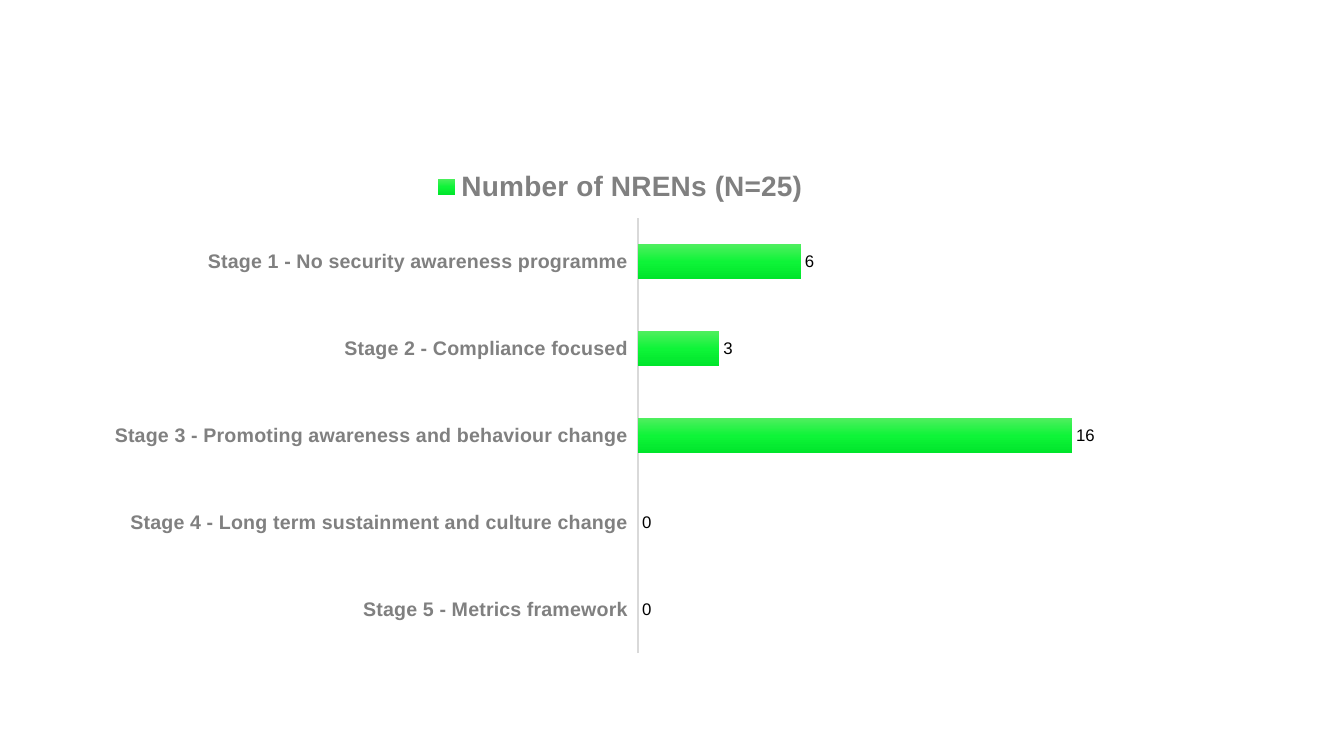
"""Build a slide with a bar chart of NRENs per security awareness stage."""
from copy import deepcopy

from pptx import Presentation
from pptx.chart.data import CategoryChartData
from pptx.dml.color import RGBColor
from pptx.enum.chart import XL_CHART_TYPE, XL_LABEL_POSITION, XL_LEGEND_POSITION, XL_TICK_LABEL_POSITION, XL_TICK_MARK
from pptx.oxml.ns import qn
from pptx.util import Inches, Pt

BLACK = RGBColor(0x00, 0x00, 0x00)
GRAY = RGBColor(0x80, 0x80, 0x80)
LIGHT_GRAY = RGBColor(0xD9, 0xD9, 0xD9)
GREENS = [RGBColor(0x4E, 0xEF, 0x5E), RGBColor(0x0E, 0xF4, 0x38), RGBColor(0x00, 0xE5, 0x2B)]

STAGES = [
    ("Stage 1 - No security awareness programme", 6),
    ("Stage 2 - Compliance focused", 3),
    ("Stage 3 - Promoting awareness and behaviour change", 16),
    ("Stage 4 - Long term sustainment and culture change", 0),
    ("Stage 5 - Metrics framework", 0),
]


def style_text(text, size=12, color=BLACK, bold=False):
    font = text.font
    font.name = "Arial"
    font.size = Pt(size)
    font.bold = bold
    font.color.rgb = color


prs = Presentation()
prs.slide_width, prs.slide_height = Inches(13.33), Inches(7.5)
s = prs.slides.add_slide(prs.slide_layouts[6])

data = CategoryChartData()
data.categories = [stage for stage, count in STAGES]
data.add_series("Number of NRENs (N=25)", [count for stage, count in STAGES])
chart = s.shapes.add_chart(XL_CHART_TYPE.BAR_CLUSTERED, Inches(0.93), Inches(1.57),
                           Inches(10.45), Inches(5.01), data).chart
chart.has_title = False
style_text(chart)

chart.has_legend = True
chart.legend.position = XL_LEGEND_POSITION.TOP
chart.legend.include_in_layout = False
style_text(chart.legend, size=20, color=GRAY, bold=True)

cat_axis = chart.category_axis
cat_axis.reverse_order = True
cat_axis.major_tick_mark = XL_TICK_MARK.NONE
cat_axis.minor_tick_mark = XL_TICK_MARK.NONE
cat_axis.tick_label_position = XL_TICK_LABEL_POSITION.LOW
cat_axis.format.line.color.rgb = LIGHT_GRAY
cat_axis.format.line.width = Pt(1)
style_text(cat_axis.tick_labels, size=14, color=GRAY, bold=True)

val_axis = chart.value_axis
val_axis.minimum_scale, val_axis.maximum_scale = 0, 18
val_axis.has_major_gridlines = False
val_axis.visible = False

plot = chart.plots[0]
plot.vary_by_categories = False
plot.gap_width = 150
plot.overlap = -25

ser = plot.series[0]
fill = ser.format.fill
fill.gradient()
fill.gradient_angle = 270
stops = ser.format.fill._xPr.find(".//" + qn("a:gsLst"))
stops.insert(1, deepcopy(stops[0]))
for i, (stop, color) in enumerate(zip(fill.gradient_stops, GREENS)):
    stop.position = i / 2
    stop.color.rgb = color

labels = ser.data_labels
labels.show_value = True
labels.position = XL_LABEL_POSITION.OUTSIDE_END
style_text(labels)

prs.save("out.pptx")
